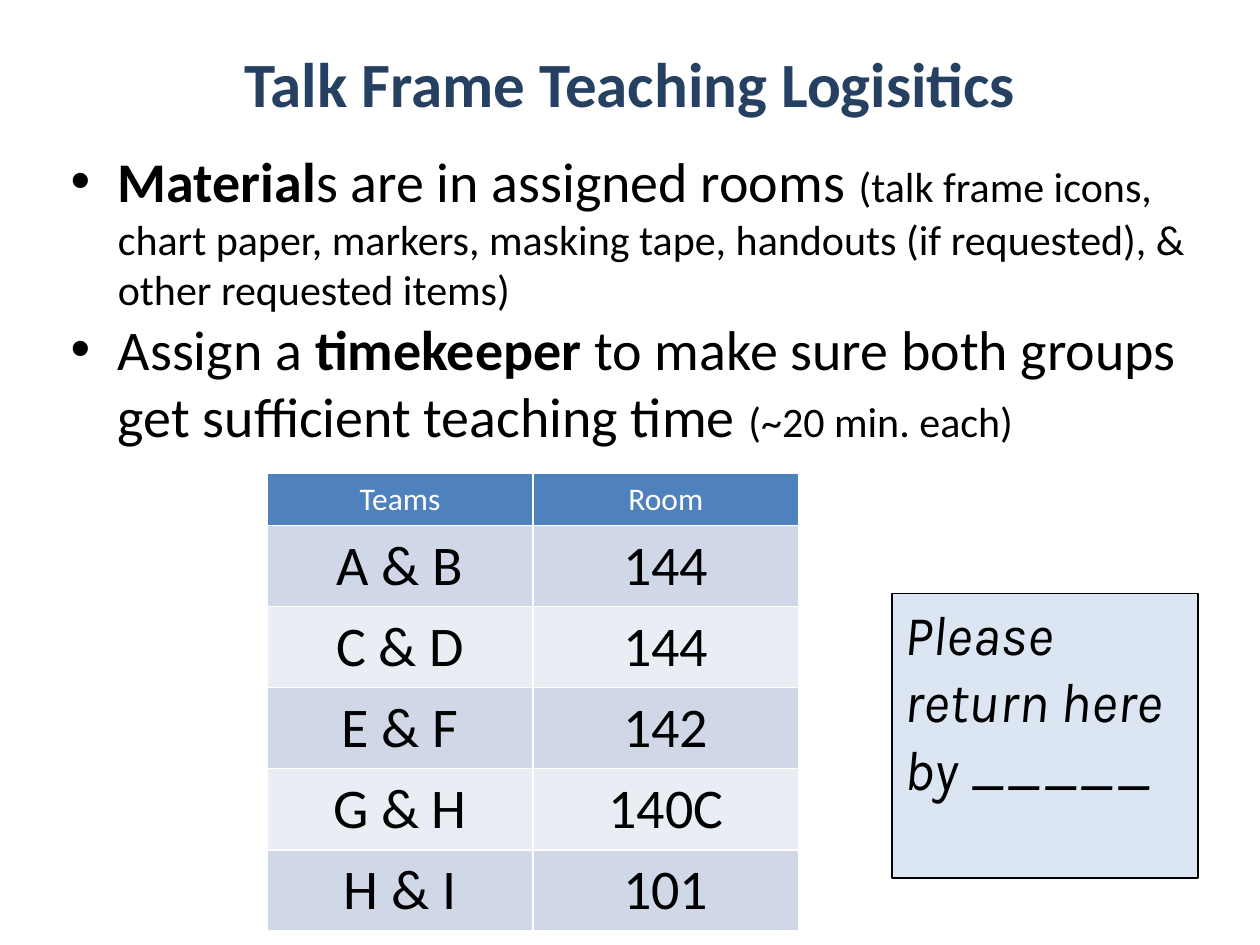
from pptx import Presentation
from pptx.dml.color import RGBColor
from pptx.enum.shapes import MSO_SHAPE as Shape
from pptx.enum.text import MSO_ANCHOR as Anchor, MSO_AUTO_SIZE as AutoSize, PP_ALIGN as Align
from pptx.util import Inches, Pt

deck = Presentation()
deck.slide_width, deck.slide_height = Inches(10), Inches(7.5)
slide = deck.slides.add_slide(deck.slide_layouts[1])
column, row = deck.slide_width / 100, deck.slide_height / 100


def area(left, top, width, height):
    return [int(left * column), int(top * row), int(width * column), int(height * row)]


def add_run(paragraph, text, size, color="000000", bold=False, italic=False, face="Calibri"):
    run = paragraph.add_run()
    run.text = text
    run.font.name, run.font.size = face, Pt(size)
    run.font.bold, run.font.italic = bold, italic
    run.font.color.rgb = RGBColor.from_string(color)


heading, logistics = slide.shapes.title, slide.placeholders[1]
for holder, place, anchor in [
    (heading, area(5.1, 1.87, 89.8, 13.73), Anchor.MIDDLE),
    (logistics, area(4.6, 14.8, 95.4, 32.13), Anchor.TOP),
]:
    holder.left, holder.top, holder.width, holder.height = place
    holder.text_frame.auto_size = AutoSize.NONE
    holder.text_frame.vertical_anchor = anchor

title_line = heading.text_frame.paragraphs[0]
title_line.alignment = Align.CENTER
add_run(title_line, "Talk Frame Teaching Logisitics", 36, "254061", bold=True)

instructions = [
    [
        ("Material", 32, True),
        ("s are in assigned rooms ", 32, False),
        ("(talk frame icons, chart paper, markers, masking tape, "
         "handouts (if requested), & other requested items)", 24, False),
    ],
    [
        ("Assign a ", 32, False),
        ("timekeeper", 32, True),
        (" to make sure both groups get sufficient teaching time ", 32, False),
        ("(~20 min. each)", 24, False),
    ],
]
for index, parts in enumerate(instructions):
    frame = logistics.text_frame
    instruction = frame.add_paragraph() if index else frame.paragraphs[0]
    instruction.space_before = Pt(0)
    for text, size, bold in parts:
        add_run(instruction, text, size, bold=bold)

assignments = [
    ("Teams", "Room"),
    ("A & B", "144"),
    ("C & D", "144"),
    ("E & F", "142"),
    ("G & H", "140C"),
    ("H & I", "101"),
]
rooms = slide.shapes.add_table(len(assignments), 2, *area(21.2, 50.13, 42.2, 48.3)).table
for index, assignment in enumerate(assignments):
    header = index == 0
    rooms.rows[index].height = int((5.47 if header else 8.57) * row)
    fill = "4F81BD" if header else ("E9EDF4", "D0D8E8")[index % 2]
    for cell, text in zip(rooms.rows[index].cells, assignment):
        cell.fill.solid()
        cell.fill.fore_color.rgb = RGBColor.from_string(fill)
        entry = cell.text_frame.paragraphs[0]
        entry.alignment = Align.CENTER
        add_run(entry, text, 18 if header else 32, "FFFFFF" if header else "000000")

reminder = slide.shapes.add_shape(Shape.RECTANGLE, *area(70.8, 62.8, 24.3, 30.13))
reminder.shadow.inherit = False
reminder.fill.solid()
reminder.fill.fore_color.rgb = RGBColor.from_string("DCE6F2")
reminder.line.color.rgb = RGBColor.from_string("000000")
reminder.line.width = Pt(0.75)
reminder.text_frame.word_wrap = True
reminder.text_frame.vertical_anchor = Anchor.TOP
reminder_line = reminder.text_frame.paragraphs[0]
reminder_line.alignment = Align.LEFT
add_run(reminder_line, "Please return here by _____", 32, italic=True, face="Karla")

deck.save("out.pptx")
